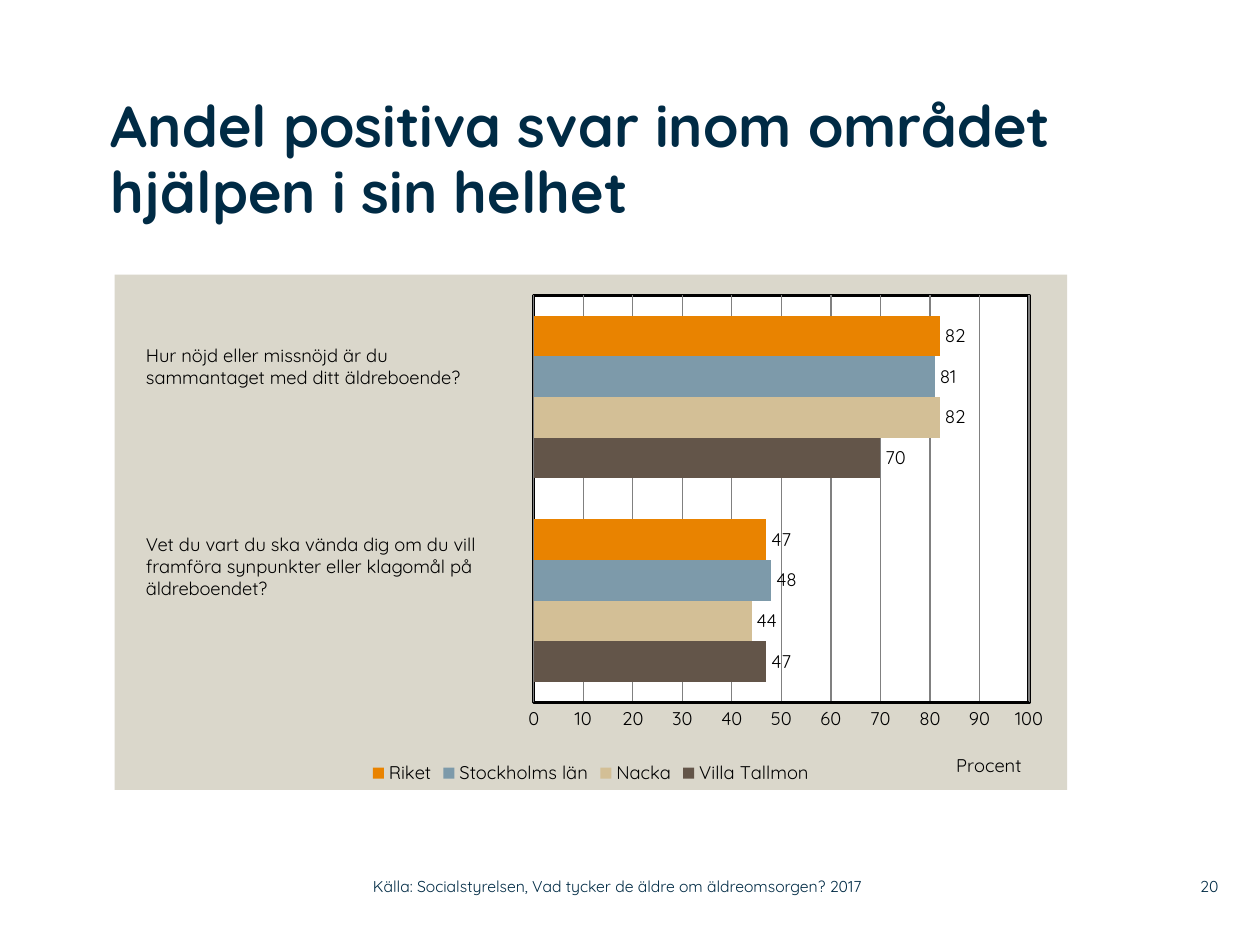
from lxml import etree
from pptx import Presentation
from pptx.chart.data import CategoryChartData
from pptx.dml.color import RGBColor
from pptx.enum.chart import XL_CHART_TYPE as ChartType
from pptx.enum.chart import XL_LABEL_POSITION as LabelPosition
from pptx.enum.chart import XL_LEGEND_POSITION as LegendPosition
from pptx.enum.chart import XL_TICK_MARK as TickMark
from pptx.enum.text import MSO_ANCHOR as Anchor
from pptx.enum.text import PP_ALIGN as Align
from pptx.oxml import parse_xml
from pptx.oxml.ns import nsdecls, qn
from pptx.util import Pt

PX = 9144
FONT = "Quicksand"
NAVY = RGBColor(0x00, 0x2B, 0x45)
BLACK = RGBColor(0x00, 0x00, 0x00)
WHITE = RGBColor(0xFF, 0xFF, 0xFF)
GRID = RGBColor(0x80, 0x80, 0x80)
PANEL = RGBColor(0xDA, 0xD7, 0xCB)
BROWN = RGBColor(0x63, 0x55, 0x49)
SAND = RGBColor(0xD3, 0xBF, 0x96)
BLUE = RGBColor(0x7D, 0x9A, 0xAA)
ORANGE = RGBColor(0xE9, 0x83, 0x00)

SERIES = [
    ("Villa Tallmon", (47, 70), BROWN),
    ("Nacka", (44, 82), SAND),
    ("Stockholms län", (48, 81), BLUE),
    ("Riket", (47, 82), ORANGE),
]


def style_font(font, size, color, bold=False):
    font.name = FONT
    font.size = Pt(size)
    font.bold = bold
    font.color.rgb = color


def manual_layout(**values):
    layout = parse_xml(f"<c:layout {nsdecls('c')}><c:manualLayout/></c:layout>")
    for tag, value in values.items():
        etree.SubElement(layout[0], qn(f"c:{tag}")).set("val", str(value))
    return layout


deck = Presentation()
deck.slide_width = 1000 * PX
deck.slide_height = 750 * PX
page = deck.slides.add_slide(deck.slide_layouts[6])

data = CategoryChartData(number_format="0")
data.categories = ["1", "2"]
for name, values, color in SERIES:
    data.add_series(name, values)
chart = page.shapes.add_chart(
    ChartType.BAR_CLUSTERED, 91 * PX, 218 * PX, 756 * PX, 409 * PX, data
).chart
style_font(chart.font, 10.5, BLACK)
chart.has_title = False
chart.has_legend = True
chart.legend.position = LegendPosition.BOTTOM
chart.legend.include_in_layout = False
style_font(chart.legend.font, 10.5, BLACK)

plot = chart.plots[0]
plot.gap_width = 100
plot.overlap = 0
plot.vary_by_categories = False
for series, (name, values, color) in zip(plot.series, SERIES):
    series.format.fill.solid()
    series.format.fill.fore_color.rgb = color
    labels = series.data_labels
    labels.show_value = True
    labels.position = LabelPosition.OUTSIDE_END
    style_font(labels.font, 10.5, BLACK)

chart.category_axis.visible = False
axis = chart.value_axis
axis.minimum_scale = 0
axis.maximum_scale = 100
axis.major_unit = 10
axis.major_tick_mark = TickMark.NONE
axis.minor_tick_mark = TickMark.NONE
axis.format.line.color.rgb = BLACK
axis.format.line.width = Pt(2)
axis.major_gridlines.format.line.color.rgb = GRID
axis.major_gridlines.format.line.width = Pt(0.75)
style_font(axis.tick_labels.font, 10.5, BLACK)

title = axis.axis_title
title.text_frame.text = "Procent"
style_font(title.text_frame.paragraphs[0].font, 10.5, BLACK)
for old in title._element.findall(qn("c:layout")):
    title._element.remove(old)
title._element.find(qn("c:tx")).addnext(
    manual_layout(xMode="edge", yMode="edge", x=0.88, y=0.92)
)

plot_area = chart._chartSpace.chart.plotArea
for old in plot_area.findall(qn("c:layout")):
    plot_area.remove(old)
plot_area.insert(0, manual_layout(
    layoutTarget="inner", xMode="edge", yMode="edge", x=0.44, y=0.04, w=0.52, h=0.79
))
plot_area.append(parse_xml(
    f'<c:spPr {nsdecls("c", "a")}><a:solidFill><a:srgbClr val="{WHITE}"/></a:solidFill>'
    f'<a:ln w="{Pt(2)}"><a:solidFill><a:srgbClr val="{BLACK}"/></a:solidFill></a:ln></c:spPr>'
))
chart._chartSpace.chart.addnext(parse_xml(
    f'<c:spPr {nsdecls("c", "a")}><a:solidFill><a:srgbClr val="{PANEL}"/></a:solidFill>'
    '<a:ln><a:noFill/></a:ln></c:spPr>'
))

TEXTS = [
    ((88, 75, 760, 142), ["Andel positiva svar inom området hjälpen i sin helhet"],
     33, NAVY, True, Align.LEFT, Anchor.TOP, (0, 0), 0.95),
    ((106, 268, 298, 45),
     ["Hur nöjd eller missnöjd är du", "sammantaget med ditt äldreboende?"],
     10.5, BLACK, False, Align.LEFT, Anchor.TOP, (10, 5), 1.0),
    ((106, 418, 297, 63),
     ["Vet du vart du ska vända dig om du vill framföra synpunkter eller klagomål på äldreboendet?"],
     10.5, BLACK, False, Align.LEFT, Anchor.TOP, (10, 5), 1.0),
    ((920, 689, 47, 29), ["20"],
     9, NAVY, False, Align.RIGHT, Anchor.MIDDLE, (0, 0), 1.0),
    ((296, 689, 443, 29),
     ["Källa: Socialstyrelsen, Vad tycker de äldre om äldreomsorgen? 2017"],
     9, NAVY, False, Align.LEFT, Anchor.MIDDLE, (0, 0), 1.0),
]
for place, lines, size, color, bold, align, anchor, (side, edge), spacing in TEXTS:
    box = page.shapes.add_textbox(*(length * PX for length in place))
    frame = box.text_frame
    frame.word_wrap = True
    frame.vertical_anchor = anchor
    frame.margin_left = frame.margin_right = side * PX
    frame.margin_top = frame.margin_bottom = edge * PX
    frame.text = "\n".join(lines)
    for para in frame.paragraphs:
        para.alignment = align
        para.line_spacing = spacing
        style_font(para.font, size, color, bold)

deck.save("out.pptx")
